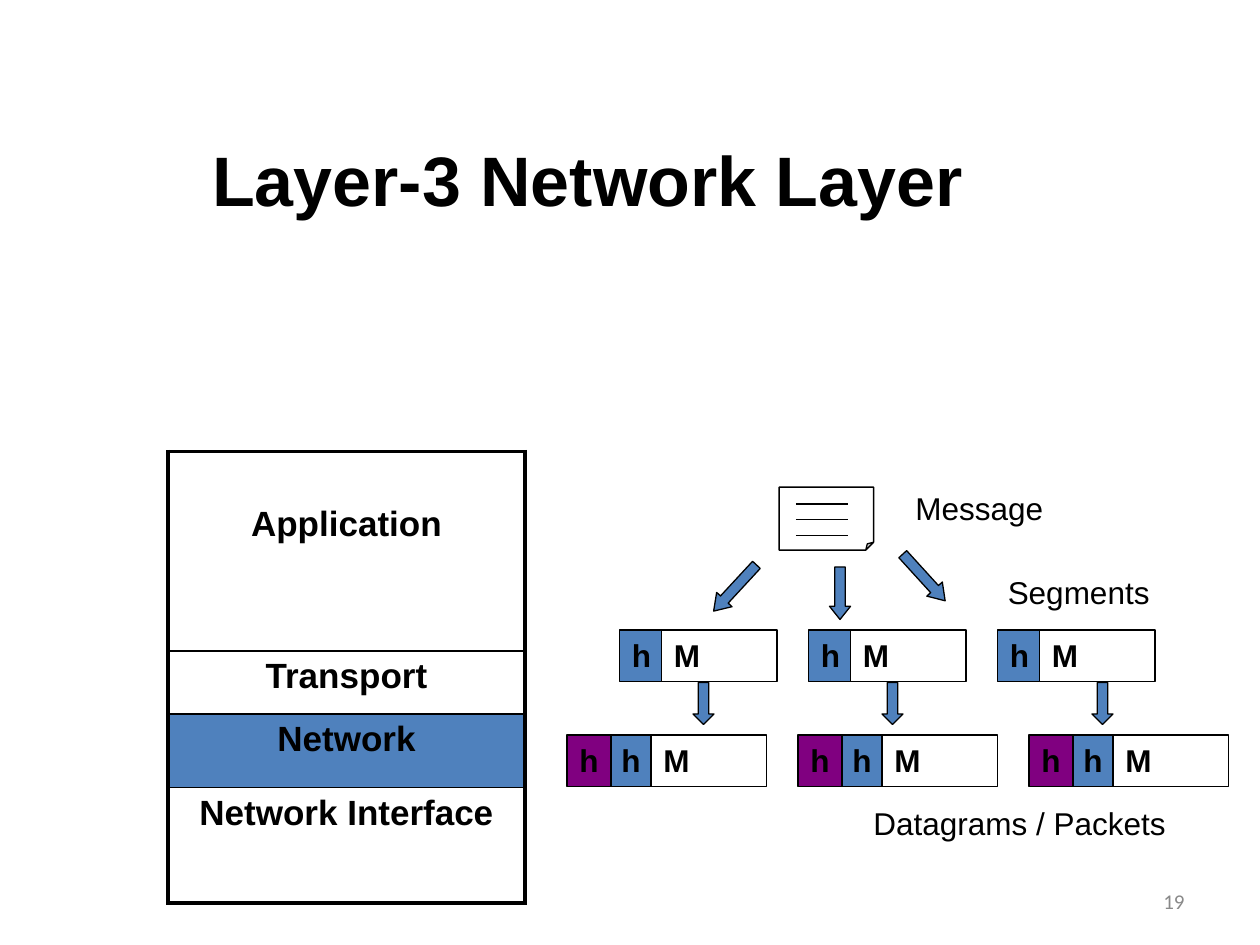
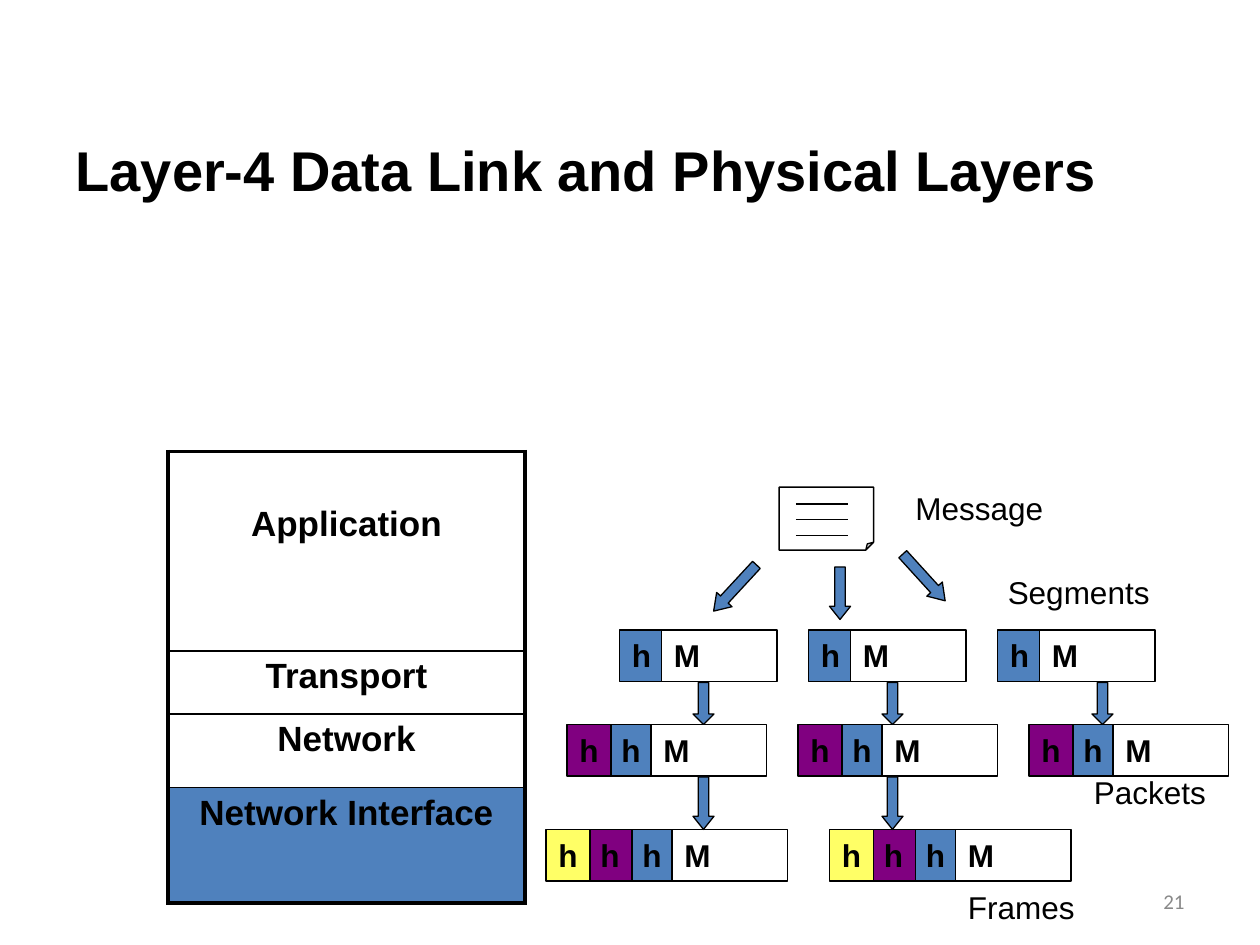
from dataclasses import dataclass

from lxml import etree
from pptx import Presentation
from pptx import util as u
from pptx.dml.color import RGBColor
from pptx.enum import shapes, text
from pptx.oxml import ns

# Shared scale, colours and fonts
PX = 7620  # EMU per px, 120 px to the inch
BLACK = RGBColor(0x00, 0x00, 0x00)
WHITE = RGBColor(0xFF, 0xFF, 0xFF)
BLUE = RGBColor(0x4F, 0x81, 0xBD)
PURPLE = RGBColor(0x80, 0x00, 0x80)
YELLOW = RGBColor(0xFF, 0xFF, 0x66)
GREY = RGBColor(0x89, 0x89, 0x89)
FONT = "Arial"
NUMBER_FONT = "Calibri"
THIN = 0.75

# Shared sizes in px
CELL_PITCH = 40
HEADER_WIDTH = 42
MESSAGE_WIDTH = 110
CELL_HEIGHT = 49
ARROW_WIDTH = 20
LABEL_HEIGHT = 60


@dataclass(frozen=True)
class Box:
    left: int
    top: int
    width: int
    height: int

    def emu(self) -> tuple[int, int, int, int]:
        return self.left * PX, self.top * PX, self.width * PX, self.height * PX


@dataclass(frozen=True)
class Label:
    words: str
    box: Box


@dataclass(frozen=True)
class Arrow:
    left: int
    top: int
    height: int
    rotation: float = 0


@dataclass(frozen=True)
class UnitRow:
    """Equal data units side by side; headers run from outermost to innermost."""
    headers: tuple[RGBColor, ...]
    lefts: tuple[int, ...]
    top: int


@dataclass(frozen=True)
class Layer:
    name: str
    height: int
    space_above: int = 6


@dataclass(frozen=True)
class LayerSlide:
    title: str
    title_box: Box
    title_size: int
    number: str
    active_layer: str
    rows: tuple[UnitRow, ...]
    arrows: tuple[Arrow, ...]
    labels: tuple[Label, ...]


# Content
LAYERS = (Layer("Application", 190, 51), Layer("Transport", 60),
          Layer("Network", 70), Layer("Network Interface", 110))
STACK = Box(160, 430, 340, sum(layer.height for layer in LAYERS))
DOCUMENT = Box(742, 464, 90, 60)
NUMBER_BOX = Box(860, 834, 280, 48)

SEGMENT_ROW = UnitRow((BLUE,), (590, 770, 950), 600)
PACKET_HEADERS = (PURPLE, BLUE)
PACKET_LEFTS = (540, 760, 980)
COMMON_ARROWS = (
    Arrow(690, 530, 60, 42.8), Arrow(790, 540, 50), Arrow(870, 520, 60, 317.7),
    *(Arrow(left, 650, 40) for left in (660, 840, 1040)),
)
COMMON_LABELS = (Label("Message", Box(860, 460, 164, LABEL_HEIGHT)),
                 Label("Segments", Box(948, 540, 180, LABEL_HEIGHT)))

LAYER_SLIDES = (
    LayerSlide(
        "Layer-3 Network Layer", Box(190, 100, 910, 150), 40, "19", "Network",
        (SEGMENT_ROW, UnitRow(PACKET_HEADERS, PACKET_LEFTS, 700)),
        COMMON_ARROWS,
        (*COMMON_LABELS,
         Label("Datagrams / Packets", Box(820, 760, 350, LABEL_HEIGHT))),
    ),
    LayerSlide(
        "Layer-4 Data Link and Physical Layers", Box(60, 90, 1110, 150), 32,
        "21", "Network Interface",
        (SEGMENT_ROW, UnitRow(PACKET_HEADERS, PACKET_LEFTS, 690),
         UnitRow((YELLOW, *PACKET_HEADERS), (520, 790), 790)),
        (*COMMON_ARROWS, *(Arrow(left, 740, 50) for left in (660, 840))),
        (*COMMON_LABELS,
         Label("Packets", Box(1030, 730, 146, LABEL_HEIGHT)),
         Label("Frames", Box(910, 840, 142, LABEL_HEIGHT))),
    ),
)


# Text and shape helpers
def write(frame, words: str, size: int, bold: bool = False, color=BLACK,
          align=text.PP_ALIGN.LEFT, font: str = FONT):
    paragraph = frame.paragraphs[0]
    paragraph.alignment = align
    run = paragraph.add_run()
    run.text = words
    run.font.name = font
    run.font.size = u.Pt(size)
    run.font.bold = bold
    run.font.color.rgb = color
    return paragraph


def draw_shape(container, kind, box: Box, fill: RGBColor):
    shape = container.add_shape(kind, *box.emu())
    shape.shadow.inherit = False
    shape.fill.solid()
    shape.fill.fore_color.rgb = fill
    shape.line.color.rgb = BLACK
    shape.line.width = u.Pt(THIN)
    return shape


def draw_cell(container, words: str, box: Box, fill: RGBColor, wrap: bool) -> None:
    shape = draw_shape(container, shapes.MSO_SHAPE.RECTANGLE, box, fill)
    frame = shape.text_frame
    frame.word_wrap = wrap
    frame.auto_size = text.MSO_AUTO_SIZE.SHAPE_TO_FIT_TEXT
    frame.vertical_anchor = text.MSO_ANCHOR.TOP
    write(frame, words, 18, bold=True)


def draw_unit(slide, headers: tuple[RGBColor, ...], left: int, top: int) -> None:
    container = slide.shapes.add_group_shape().shapes
    message_left = left + CELL_PITCH * len(headers)

    def draw_header(index: int) -> None:
        box = Box(left + CELL_PITCH * index, top, HEADER_WIDTH, CELL_HEIGHT)
        draw_cell(container, "h", box, headers[index], False)

    # The message covers the inner header's edge; outer headers lie on top
    inner = len(headers) - 1
    draw_header(inner)
    draw_cell(container, "M", Box(message_left, top, MESSAGE_WIDTH, CELL_HEIGHT),
              WHITE, True)
    for index in reversed(range(inner)):
        draw_header(index)


def draw_arrow(slide, arrow: Arrow) -> None:
    box = Box(arrow.left, arrow.top, ARROW_WIDTH, arrow.height)
    shape = draw_shape(slide.shapes, shapes.MSO_SHAPE.DOWN_ARROW, box, BLUE)
    shape.adjustments[0] = 0.5
    shape.adjustments[1] = arrow.height / 4 / ARROW_WIDTH
    shape.rotation = arrow.rotation


def draw_label(slide, label: Label) -> None:
    frame = slide.shapes.add_textbox(*label.box.emu()).text_frame
    frame.word_wrap = False
    frame.auto_size = text.MSO_AUTO_SIZE.SHAPE_TO_FIT_TEXT
    write(frame, label.words, 18)


def draw_document(slide) -> None:
    container = slide.shapes.add_group_shape().shapes
    page = draw_shape(container, shapes.MSO_SHAPE.FOLDED_CORNER, DOCUMENT, WHITE)
    # python-pptx lists no adjustment for this preset
    for guides in page._element.spPr.iter(ns.qn("a:avLst")):
        etree.SubElement(guides, ns.qn("a:gd"), name="adj", fmla="val 12500")
    for line_number in range(3):
        y = (DOCUMENT.top + 16 + 15 * line_number) * PX
        line = container.add_connector(
            shapes.MSO_CONNECTOR.STRAIGHT,
            (DOCUMENT.left + 16) * PX, y, (DOCUMENT.left + 66) * PX, y)
        line.line.color.rgb = BLACK
        line.line.width = u.Pt(THIN)
        etree.SubElement(line._element.spPr, ns.qn("a:effectLst"))


# Layer stack
def set_border(cell, side: str, points: float) -> None:
    properties = cell._tc.get_or_add_tcPr()
    border = etree.SubElement(properties, ns.qn(f"a:ln{side}"),
                              w=str(int(u.Pt(points))))
    fill = etree.SubElement(border, ns.qn("a:solidFill"))
    etree.SubElement(fill, ns.qn("a:srgbClr"), val=str(BLACK))


def draw_stack(slide, active_layer: str) -> None:
    table = slide.shapes.add_table(len(LAYERS), 1, *STACK.emu()).table
    table.first_row = False
    table.horz_banding = False
    last = len(LAYERS) - 1
    for index, layer in enumerate(LAYERS):
        table.rows[index].height = layer.height * PX
        cell = table.cell(index, 0)
        cell.margin_top = layer.space_above * PX
        write(cell.text_frame, layer.name, 20, True, align=text.PP_ALIGN.CENTER)
        set_border(cell, "L", 2.25)
        set_border(cell, "R", 2.25)
        set_border(cell, "T", 2.25 if index == 0 else 1)
        set_border(cell, "B", 2.25 if index == last else 1)
        if layer.name == active_layer:
            cell.fill.solid()
            cell.fill.fore_color.rgb = BLUE
        else:
            cell.fill.background()


# Slides
def draw_title(slide, content: LayerSlide) -> None:
    title = slide.shapes.title
    title.left, title.top, title.width, title.height = content.title_box.emu()
    frame = title.text_frame
    frame.word_wrap = True
    frame.auto_size = text.MSO_AUTO_SIZE.NONE
    frame.vertical_anchor = text.MSO_ANCHOR.MIDDLE
    paragraph = write(frame, content.title, content.title_size, bold=True)
    paragraph.line_spacing = 0.9


def draw_number(slide, number: str) -> None:
    frame = slide.shapes.add_textbox(*NUMBER_BOX.emu()).text_frame
    frame.word_wrap = True
    frame.vertical_anchor = text.MSO_ANCHOR.MIDDLE
    write(frame, number, 12, color=GREY, align=text.PP_ALIGN.RIGHT,
          font=NUMBER_FONT)


def build_slide(presentation, content: LayerSlide) -> None:
    slide = presentation.slides.add_slide(presentation.slide_layouts[5])
    draw_number(slide, content.number)
    draw_title(slide, content)
    draw_stack(slide, content.active_layer)
    draw_document(slide)
    for row in content.rows:
        for left in row.lefts:
            draw_unit(slide, row.headers, left, row.top)
    for arrow in content.arrows:
        draw_arrow(slide, arrow)
    for label in content.labels:
        draw_label(slide, label)


def main() -> None:
    presentation = Presentation()
    presentation.slide_width = 1200 * PX
    presentation.slide_height = 900 * PX
    for content in LAYER_SLIDES:
        build_slide(presentation, content)
    presentation.save("out.pptx")


if __name__ == "__main__":
    main()
